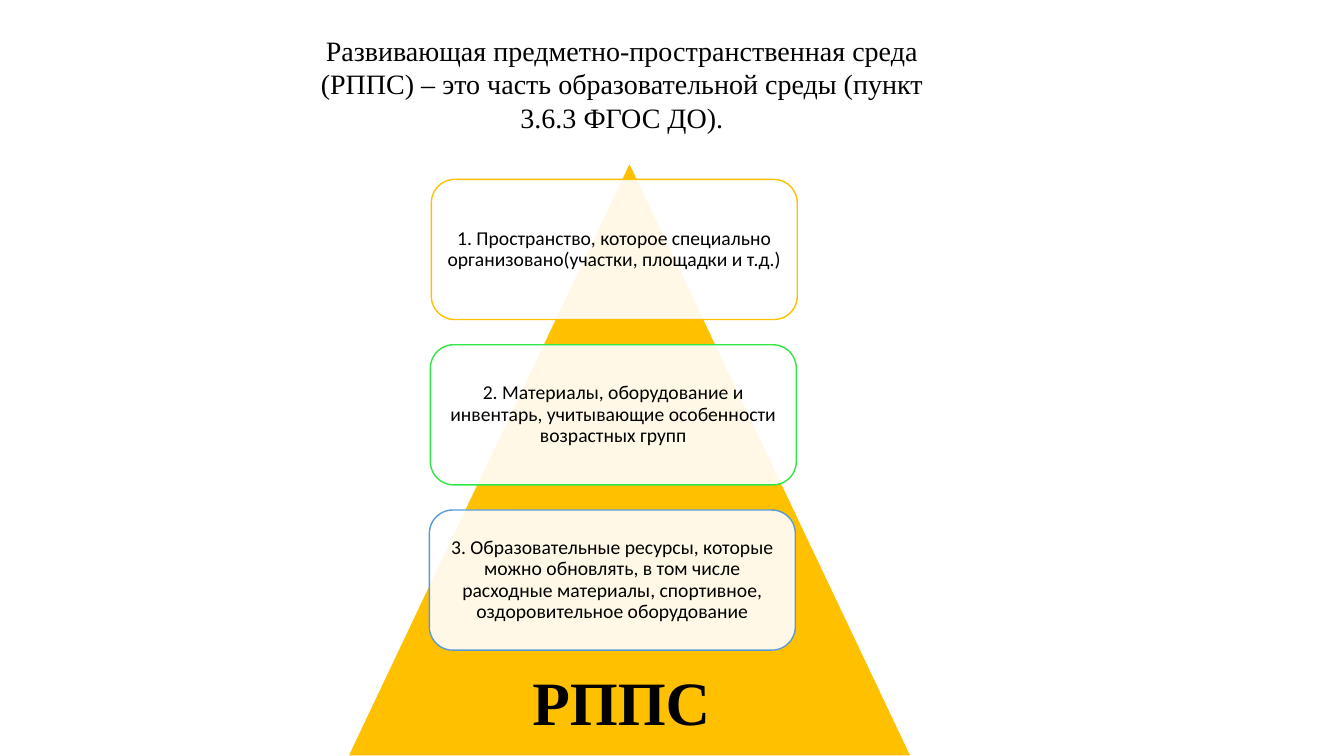
from pptx import Presentation
from pptx.dml.color import RGBColor as Rgb
from pptx.enum.shapes import MSO_SHAPE as Shape
from pptx.enum.text import MSO_ANCHOR as Anchor, PP_ALIGN as Align
from pptx.oxml.ns import qn
from pptx.util import Inches, Pt
from lxml.etree import SubElement

COLORS = {"white": "FFFFFF", "black": "000000", "gold": "FFC000",
          "green": "30E845", "blue": "5B9BD5"}
COLUMNS, ROWS = 40, 30
CARDS = [
    ("gold", "1. Пространство, которое специально организовано(участки, площадки и т.д.)"),
    ("green", "2. Материалы, оборудование и инвентарь, учитывающие особенности возрастных групп"),
    ("blue", "3. Образовательные ресурсы, которые можно обновлять, в том числе расходные "
             "материалы, спортивное, оздоровительное оборудование"),
]


class Page:
    """Draws styled elements on one slide, placed by grid columns and rows."""

    def __init__(self, deck):
        self.slide = deck.slides.add_slide(deck.slide_layouts[6])
        self.column = deck.slide_width / COLUMNS
        self.row = deck.slide_height / ROWS

    def place(self, left, top, width, height):
        return (round(left * self.column), round(top * self.row),
                round(width * self.column), round(height * self.row))

    def fill_text(self, box, text, frame_format=None, spacing=None, **font_format):
        frame = box.text_frame
        for name, value in {"word_wrap": True, **(frame_format or {})}.items():
            setattr(frame, name, value)
        para = frame.paragraphs[0]
        para.alignment = Align.CENTER
        para.line_spacing = spacing
        span = para.add_run()
        span.text = text
        for name, value in font_format.items():
            setattr(span.font, name, value)
        span.font.color.rgb = Rgb.from_string(COLORS["black"])

    def label(self, place, text, **font_format):
        box = self.slide.shapes.add_textbox(*self.place(*place))
        self.fill_text(box, text, name="Times New Roman", **font_format)

    def shape(self, kind, place, fill, line):
        shape = self.slide.shapes.add_shape(kind, *self.place(*place))
        shape.shadow.inherit = False
        shape.fill.solid()
        shape.fill.fore_color.rgb = Rgb.from_string(COLORS[fill])
        shape.line.color.rgb = Rgb.from_string(COLORS[line])
        shape.line.width = Pt(1)
        return shape

    def card(self, place, line, text):
        box = self.shape(Shape.ROUNDED_RECTANGLE, place, "white", line)
        color = box.element.spPr.find(qn("a:solidFill"))[0]
        SubElement(color, qn("a:alpha"), val="90000")
        sides = ("left", "top", "right", "bottom")
        frame_format = {f"margin_{side}": Inches(0.06) for side in sides}
        frame_format["vertical_anchor"] = Anchor.MIDDLE
        self.fill_text(box, text, frame_format, 0.9, name="Calibri", size=Pt(14))


def main():
    deck = Presentation()
    deck.slide_width, deck.slide_height = Inches(13.33), Inches(7.5)
    page = Page(deck)
    page.label((9.21, 1.12, 18.6, 4.44),
               "Развивающая предметно-пространственная среда (РППС) – это часть "
               "образовательной среды (пункт 3.6.3 ФГОС ДО).", size=Pt(20))
    page.shape(Shape.ISOSCELES_TRIANGLE, (10.35, 6.44, 16.77, 23.56), "gold", "white")
    for index, (line, text) in enumerate(CARDS):
        place = (12.84 - 0.03 * index, 7.12 + 6.56 * index, 10.89, 5.56)
        page.card(place, line, text)
    page.label((13.35, 26.16, 10.29, 3.36), "РППС", size=Pt(44), bold=True)
    deck.save("out.pptx")


if __name__ == "__main__":
    main()
